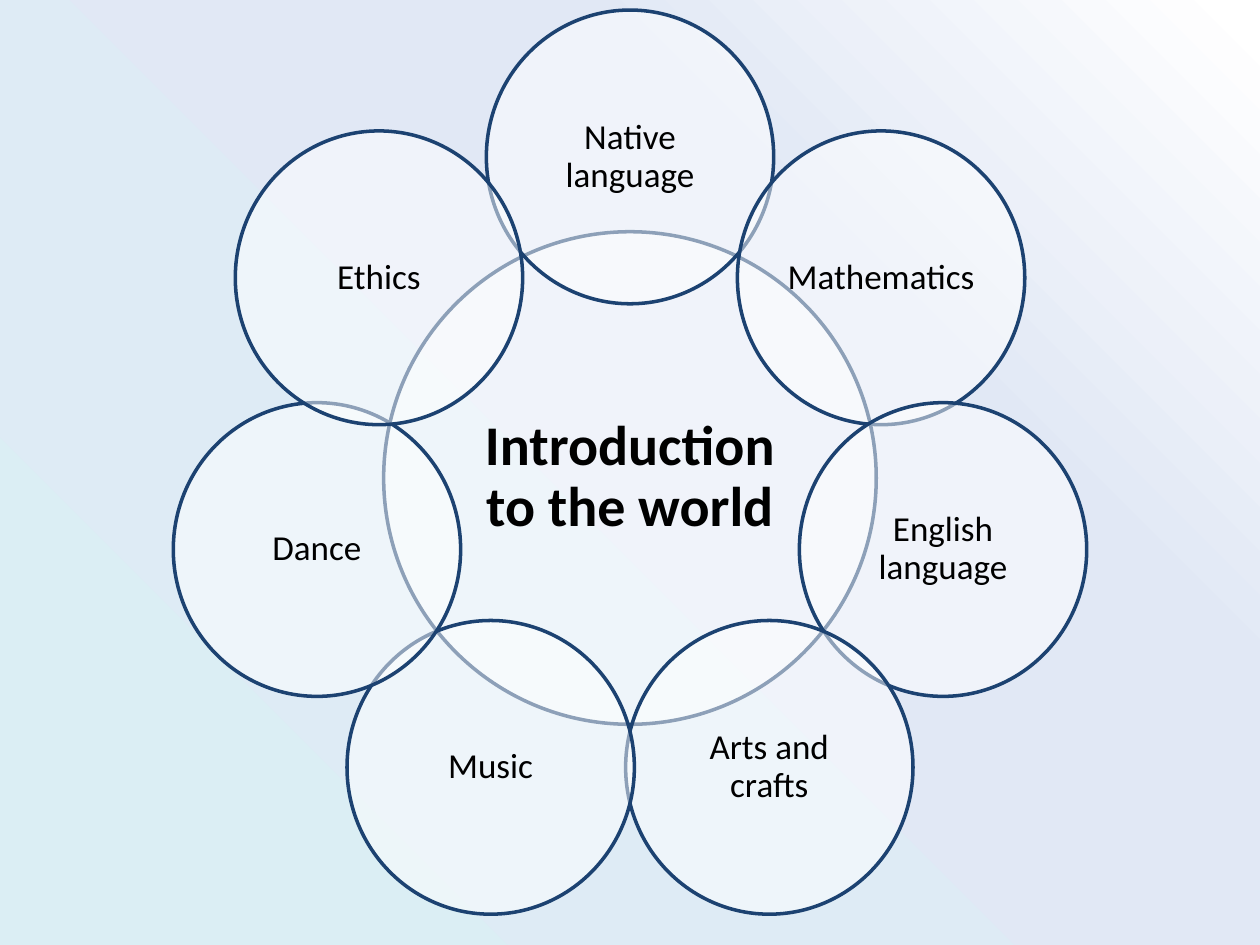
import math
from dataclasses import dataclass

import pptx
import pptx.dml.color
import pptx.enum.shapes
import pptx.enum.text
import pptx.oxml
import pptx.oxml.ns
import pptx.util
from pptx.util import Inches


@dataclass(frozen=True)
class Theme:
    font: str = "Calibri"
    text: str = "000000"
    fill: str = "FFFFFF"
    fill_opacity: int = 50
    line: str = "1C4271"
    line_width: float = 2
    hub_size: int = 32
    subject_size: int = 20
    background: tuple = ((0, "DBEEF4"), (69, "E1E8F5"), (99, "FFFFFF"))


THEME = Theme()
HUB = "Introduction to the world"
SUBJECTS = (
    "Native language", "Mathematics", "English language", "Arts and crafts",
    "Music", "Dance", "Ethics",
)


def rgb(value):
    return pptx.dml.color.RGBColor.from_string(value)


def paint_background(slide):
    """Fill the slide with a gradient spreading from its lower left corner."""
    slide.background.fill.gradient()
    gradient = slide.element.find(".//" + pptx.oxml.ns.qn("a:gradFill"))
    stops = "".join(
        f'<a:gs pos="{position * 1000}"><a:srgbClr val="{color}"/></a:gs>'
        for position, color in THEME.background
    )
    replacement = pptx.oxml.parse_xml(
        f'<a:gradFill {pptx.oxml.ns.nsdecls("a")} rotWithShape="1">'
        f'<a:gsLst>{stops}</a:gsLst><a:path path="circle">'
        '<a:fillToRect t="100000" r="100000"/></a:path></a:gradFill>'
    )
    gradient.getparent().replace(gradient, replacement)


def write_text(shape, text, *, size, bold=False, inset=0.03):
    frame = shape.text_frame
    frame.word_wrap = True
    frame.vertical_anchor = pptx.enum.text.MSO_ANCHOR.MIDDLE
    frame.margin_left = frame.margin_right = Inches(inset)
    frame.margin_top = frame.margin_bottom = Inches(inset)
    paragraph = frame.paragraphs[0]
    paragraph.alignment = pptx.enum.text.PP_ALIGN.CENTER
    paragraph.line_spacing = 0.9
    run = paragraph.add_run()
    run.text = text
    run.font.name = THEME.font
    run.font.size = pptx.util.Pt(size)
    run.font.bold = bold
    run.font.color.rgb = rgb(THEME.text)


def add_circle(group, center_x, center_y, width, height, text, **text_format):
    """Add a translucent labelled ellipse around a centre, in inches."""
    circle = group.shapes.add_shape(
        pptx.enum.shapes.MSO_SHAPE.OVAL,
        Inches(center_x - width / 2), Inches(center_y - height / 2),
        Inches(width), Inches(height),
    )
    circle.shadow.inherit = False
    circle.fill.solid()
    circle.fill.fore_color.rgb = rgb(THEME.fill)
    color = circle.element.spPr.find(".//" + pptx.oxml.ns.qn("a:srgbClr"))
    color.append(pptx.oxml.parse_xml(
        f'<a:alpha {pptx.oxml.ns.nsdecls("a")} val="{THEME.fill_opacity * 1000}"/>'
    ))
    circle.line.color.rgb = rgb(THEME.line)
    circle.line.width = pptx.util.Pt(THEME.line_width)
    write_text(circle, text, **text_format)


def add_radial_venn(slide, left, top, width, hub, subjects):
    """Place subjects clockwise from the top around a hub, scaled to the width."""
    group = slide.shapes.add_group_shape()
    petal_width, petal_height = width * 0.315, width * 0.322
    radius = width * 0.352
    center_x = left + width / 2
    center_y = top + petal_height / 2 + radius
    hub_size = width * 0.54
    add_circle(group, center_x, center_y, hub_size, hub_size, hub,
               size=THEME.hub_size, bold=True, inset=0.04)
    for index, subject in enumerate(subjects):
        angle = 2 * math.pi * index / len(subjects)
        add_circle(
            group,
            center_x + radius * math.sin(angle),
            center_y - radius * math.cos(angle),
            petal_width, petal_height, subject, size=THEME.subject_size,
        )


def main():
    presentation = pptx.Presentation()
    presentation.slide_width = Inches(10)
    presentation.slide_height = Inches(7.5)
    slide = presentation.slides.add_slide(presentation.slide_layouts[6])
    paint_background(slide)
    add_radial_venn(slide, 1.38, 0.08, 7.24, HUB, SUBJECTS)
    presentation.save("out.pptx")


if __name__ == "__main__":
    main()
